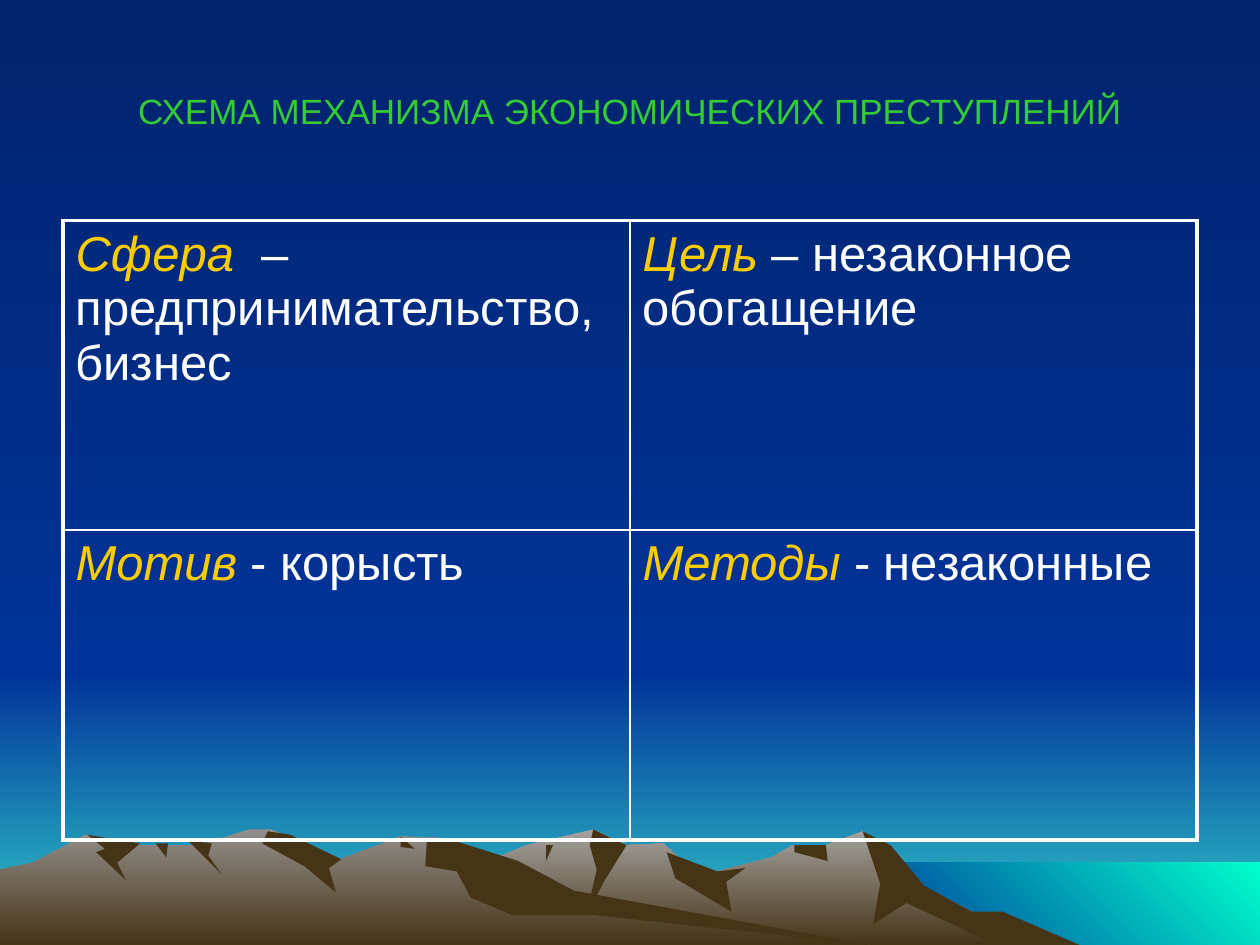
from dataclasses import dataclass
from typing import NamedTuple

from lxml.etree import SubElement
from pptx import Presentation
from pptx.dml.color import RGBColor
from pptx.enum.shapes import MSO_SHAPE as Shape
from pptx.enum.text import MSO_ANCHOR as Anchor, PP_ALIGN as Align
from pptx.oxml.ns import qn
from pptx.util import Pt


@dataclass(frozen=True)
class Theme:
    """Colours, font and sizes of the slide."""
    night: str = "00246D"
    blue: str = "003399"
    horizon: str = "33CCCC"
    sea: str = "00FFCC"
    rock: str = "463416"
    near_peak: str = "A5A29F"
    far_peak: str = "938F8B"
    title: str = "33CC33"
    term: str = "FFCC00"
    white: str = "FFFFFF"
    font: str = "Arial"
    title_size: float = 20
    body_size: float = 28
    outer_line: float = 2.25
    inner_line: float = 1


class Band(NamedTuple):
    """A rectangle with a two-colour gradient."""
    box: tuple
    colors: tuple
    angle: float = 270


class Ridge(NamedTuple):
    """A closed mountain outline in points."""
    outline: list
    colors: tuple


class Entry(NamedTuple):
    """A table cell made of a term and its meaning."""
    term: str
    meaning: str


THEME = Theme()
WIDTH, HEIGHT, HORIZON, SHORE = 720, 540, 384, 492
MARGIN = 36
SHADE = (THEME.rock,)
BANDS = [
    Band((0, HORIZON, WIDTH, HEIGHT - HORIZON), (THEME.blue, THEME.horizon)),
    Band((0, 0, WIDTH, HORIZON), (THEME.night, THEME.blue)),
    Band((SHORE, 493, WIDTH - SHORE, 47), (THEME.blue, THEME.sea), 45),
]
RIDGES = [
    Ridge([(186, HEIGHT), (256, 502), (301, 483), (339, 474), (358, 483), (379, 482), (390, 492),
           (410, 498), (441, 490), (453, 483), (472, 483), (493, 475), (521, 503), (591, HEIGHT)],
          (THEME.near_peak, THEME.rock)),
    Ridge([(493, 475), (509, 483), (528, 506), (555, 521), (573, 521), (617, HEIGHT), (570, HEIGHT),
           (518, 516), (499, 528), (503, 505)], SHADE),
    Ridge([(339, 474), (358, 483), (345, 504), (335, 523), (341, 497), (337, 483)], SHADE),
    Ridge([(381, 487), (410, 498), (426, 496), (415, 504), (418, 521), (386, 502)], SHADE),
    Ridge([(454, 483), (472, 483), (473, 492), (454, 487)], SHADE),
    Ridge([(312, 483), (316, 483), (312, 492)], SHADE),
    Ridge([(0, HEIGHT), (0, 497), (19, 493), (49, 477), (68, 483), (115, 483), (142, 474), (155, 474),
           (195, 491), (229, 478), (255, 479), (311, 513), (497, HEIGHT)],
          (THEME.far_peak, THEME.rock)),
    Ridge([(153, 475), (166, 477), (195, 491), (188, 496), (192, 510), (174, 495), (150, 482)], SHADE),
    Ridge([(244, 479), (255, 479), (296, 492), (328, 509), (497, HEIGHT), (340, 523), (293, 523),
           (269, 513), (261, 498), (243, 495)], SHADE),
    Ridge([(229, 478), (237, 485), (229, 484)], SHADE),
    Ridge([(107, 480), (121, 482), (119, 489), (127, 500)], SHADE),
    Ridge([(89, 482), (96, 482), (95, 490)], SHADE),
    Ridge([(50, 477), (80, 482), (67, 493), (72, 503), (55, 487), (60, 485)], SHADE),
]
ENTRIES = [
    [Entry("Сфера ", " – предпринимательство, бизнес"), Entry("Цель", " – незаконное обогащение")],
    [Entry("Мотив ", "- корысть"), Entry("Методы", " - незаконные")],
]


def paint(sp, colors: tuple, angle: float = 270) -> None:
    """Fill a shape or background with one colour or a gradient."""
    if len(colors) == 1:
        sp.fill.solid()
        sp.fill.fore_color.rgb = RGBColor.from_string(colors[0])
        return
    sp.fill.gradient()
    sp.fill.gradient_angle = angle
    for stop, color in zip(sp.fill.gradient_stops, colors):
        stop.color.rgb = RGBColor.from_string(color)


def finish(sp, colors: tuple, angle: float = 270) -> None:
    """Paint a shape and leave out its outline and shadow."""
    paint(sp, colors, angle)
    sp.line.fill.background()
    sp.shadow.inherit = False


def draw_band(s, band: Band) -> None:
    """Draw a gradient rectangle."""
    sp = s.shapes.add_shape(Shape.RECTANGLE, *map(Pt, band.box))
    finish(sp, band.colors, band.angle)


def draw_ridge(s, ridge: Ridge) -> None:
    """Draw a mountain outline."""
    builder = s.shapes.build_freeform(*ridge.outline[0], scale=Pt(1))
    builder.add_line_segments(ridge.outline[1:], close=True)
    finish(builder.convert_to_shape(), ridge.colors)


def add_text(p, text: str, *, size: float, color: str, italic: bool = False) -> None:
    """Add a formatted run to a paragraph."""
    r = p.add_run()
    r.text = text
    r.font.name = THEME.font
    r.font.size = Pt(size)
    r.font.italic = italic
    r.font.color.rgb = RGBColor.from_string(color)


def add_border(cell, side: str, width: float) -> None:
    """Draw one side of a cell."""
    ln = SubElement(cell._tc.get_or_add_tcPr(), qn(f"a:{side}"), w=str(Pt(width)))
    SubElement(SubElement(ln, qn("a:solidFill")), qn("a:srgbClr"), val=THEME.white)


def draw_title(s, text: str) -> None:
    """Draw the centred heading."""
    width = WIDTH - 2 * MARGIN
    tf = s.shapes.add_textbox(Pt(MARGIN), Pt(18), Pt(width), Pt(90)).text_frame
    tf.word_wrap = True
    tf.vertical_anchor = Anchor.MIDDLE
    p = tf.paragraphs[0]
    p.alignment = Align.CENTER
    add_text(p, text, size=THEME.title_size, color=THEME.title)


def draw_table(s, entries: list) -> None:
    """Draw the grid with a heavy frame and light inner lines."""
    rows, cols = len(entries), len(entries[0])
    width = WIDTH - 2 * MARGIN
    table = s.shapes.add_table(rows, cols, Pt(MARGIN), Pt(126), Pt(width), Pt(354)).table
    table.first_row = table.horz_banding = False
    for i, row in enumerate(entries):
        for j, entry in enumerate(row):
            cell = table.cell(i, j)
            edges = {"lnL": j == 0, "lnR": j == cols - 1, "lnT": i == 0, "lnB": i == rows - 1}
            for side, outer in edges.items():
                add_border(cell, side, THEME.outer_line if outer else THEME.inner_line)
            cell.fill.background()
            p = cell.text_frame.paragraphs[0]
            add_text(p, entry.term, size=THEME.body_size, color=THEME.term, italic=True)
            add_text(p, entry.meaning, size=THEME.body_size, color=THEME.white)


def main() -> None:
    """Build and save the slide."""
    prs = Presentation()
    prs.slide_width, prs.slide_height = Pt(WIDTH), Pt(HEIGHT)
    s = prs.slides.add_slide(prs.slide_layouts[6])
    paint(s.background, (THEME.night, THEME.blue))
    for band in BANDS:
        draw_band(s, band)
    for ridge in RIDGES:
        draw_ridge(s, ridge)
    draw_title(s, "СХЕМА МЕХАНИЗМА ЭКОНОМИЧЕСКИХ ПРЕСТУПЛЕНИЙ")
    draw_table(s, ENTRIES)
    prs.save("out.pptx")


if __name__ == "__main__":
    main()
